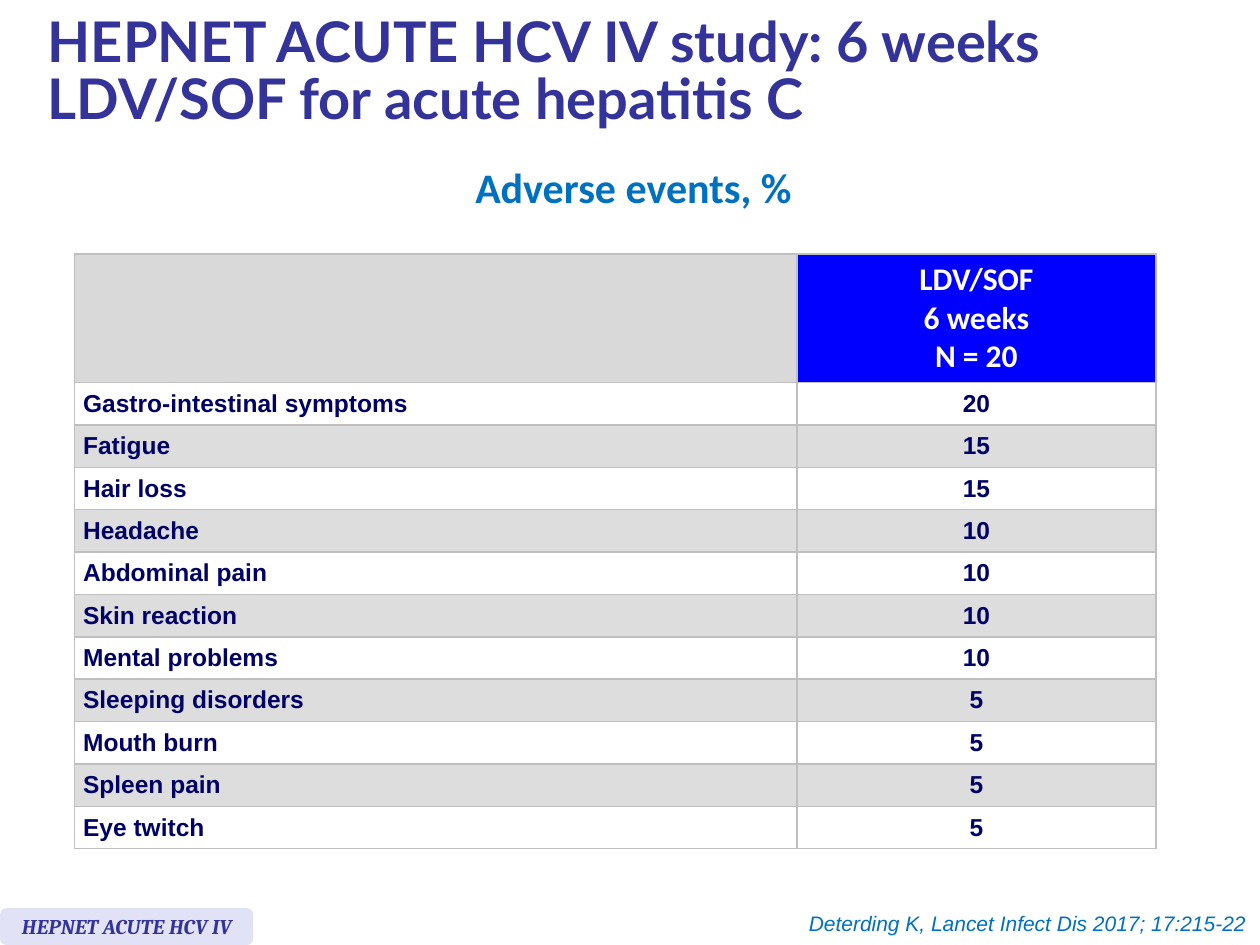
from typing import NamedTuple

from lxml.etree import SubElement as Sub
from pptx import Presentation
from pptx.dml.color import RGBColor as Rgb
from pptx.enum.shapes import MSO_SHAPE as Shape
from pptx.enum.text import MSO_ANCHOR as Anchor, PP_ALIGN as Align
from pptx.oxml.ns import qn
from pptx.util import Pt

NAVY = Rgb(0x00, 0x00, 0x66)
INDIGO = Rgb(0x33, 0x33, 0x99)
BLUE = Rgb(0x00, 0x70, 0xC0)
BRIGHT = Rgb(0x00, 0x00, 0xFF)
LILAC = Rgb(0xE2, 0xE2, 0xF6)
WHITE = Rgb(0xFF, 0xFF, 0xFF)
BAND = Rgb(0xDD, 0xDD, 0xDD)
BLANK = Rgb(0xD9, 0xD9, 0xD9)
EDGE = Rgb(0xBF, 0xBF, 0xBF)


class Box(NamedTuple):
    left: float
    top: float
    width: float
    height: float

    def place(self) -> list:
        return [Pt(side) for side in self]


class Event(NamedTuple):
    name: str
    rate: int


EVENTS = [
    Event("Gastro-intestinal symptoms", 20),
    Event("Fatigue", 15),
    Event("Hair loss", 15),
    Event("Headache", 10),
    Event("Abdominal pain", 10),
    Event("Skin reaction", 10),
    Event("Mental problems", 10),
    Event("Sleeping disorders", 5),
    Event("Mouth burn", 5),
    Event("Spleen pain", 5),
    Event("Eye twitch", 5),
]


def write(frame, text: str, *, size: float, face: str, color: Rgb,
          bold: bool = False, slant: bool = False,
          align: Align = Align.LEFT, pitch: float = 1.0) -> None:
    """Fill a text frame, one paragraph a line."""
    for i, line in enumerate(text.split("\n")):
        para = frame.add_paragraph() if i else frame.paragraphs[0]
        para.alignment = align
        para.line_spacing = pitch
        run = para.add_run()
        run.text = line
        font = run.font
        font.size, font.name = Pt(size), face
        font.bold, font.italic = bold, slant
        font.color.rgb = color


def label(slide, box: Box, text: str, **style) -> None:
    """Add a wrapped text box."""
    frame = slide.shapes.add_textbox(*box.place()).text_frame
    frame.word_wrap = True
    write(frame, text, **style)


def dress(cell, fill: Rgb, inset: float) -> None:
    """Set the borders, margins and fill of a cell."""
    props = cell._tc.get_or_add_tcPr()
    for side in ("lnL", "lnR", "lnT", "lnB"):
        line = Sub(props, qn(f"a:{side}"), w=str(Pt(1)))
        Sub(Sub(line, qn("a:solidFill")), qn("a:srgbClr"), val=str(EDGE))
    cell.fill.solid()
    cell.fill.fore_color.rgb = fill
    cell.margin_left = cell.margin_right = Pt(inset)
    cell.margin_top = cell.margin_bottom = 0
    cell.vertical_anchor = Anchor.MIDDLE


def draw_table(slide, box: Box, head: float, first: float) -> None:
    """Draw the adverse events with banded rows."""
    count = len(EVENTS)
    table = slide.shapes.add_table(count + 1, 2, *box.place()).table
    table.columns[0].width = Pt(first)
    table.columns[1].width = Pt(box.width - first)
    for i, row in enumerate(table.rows):
        row.height = Pt((box.height - head) / count if i else head)

    # Header
    dress(table.cell(0, 0), BLANK, 7.2)
    dress(table.cell(0, 1), BRIGHT, 7.2)
    write(table.cell(0, 1).text_frame, "LDV/SOF\n6 weeks\nN = 20", size=18,
          face="Calibri", color=WHITE, bold=True, align=Align.CENTER)

    # Body
    for i, event in enumerate(EVENTS, 1):
        for j, align in enumerate((Align.LEFT, Align.CENTER)):
            cell = table.cell(i, j)
            dress(cell, WHITE if i % 2 else BAND, 5)
            write(cell.text_frame, str(event[j]), size=14, face="Arial",
                  color=NAVY, bold=True, align=align)


def main() -> None:
    deck = Presentation()
    deck.slide_width, deck.slide_height = Pt(720), Pt(540)
    slide = deck.slides.add_slide(deck.slide_layouts[6])

    # Table
    draw_table(slide, Box(42.5, 145.2, 618, 340), head=73.5, first=413)

    # Headings
    label(slide, Box(6, 88.5, 712, 36), "Adverse events, %", size=24,
          face="Calibri", color=BLUE, bold=True, align=Align.CENTER)
    label(slide, Box(20.2, 5.8, 641, 77),
          "HEPNET ACUTE HCV IV study: 6 weeks LDV/SOF for acute hepatitis C",
          size=32, face="Lato", color=INDIGO, bold=True, pitch=0.85)

    # Study tag
    tag = slide.shapes.add_shape(Shape.ROUNDED_RECTANGLE,
                                 *Box(0, 519, 144.7, 21).place())
    tag.adjustments[0] = 0.17
    tag.shadow.inherit = False
    tag.fill.solid()
    tag.fill.fore_color.rgb = LILAC
    tag.line.fill.background()
    label(slide, Box(5.5, 518.4, 139, 21.6), "HEPNET ACUTE HCV IV", size=12,
          face="Cambria", color=INDIGO, bold=True, slant=True)

    # Citation
    label(slide, Box(320.4, 517, 399, 21.6),
          "Deterding K, Lancet Infect Dis 2017; 17:215-22", size=12,
          face="Arial", color=BLUE, slant=True, align=Align.RIGHT)

    deck.save("out.pptx")


if __name__ == "__main__":
    main()
